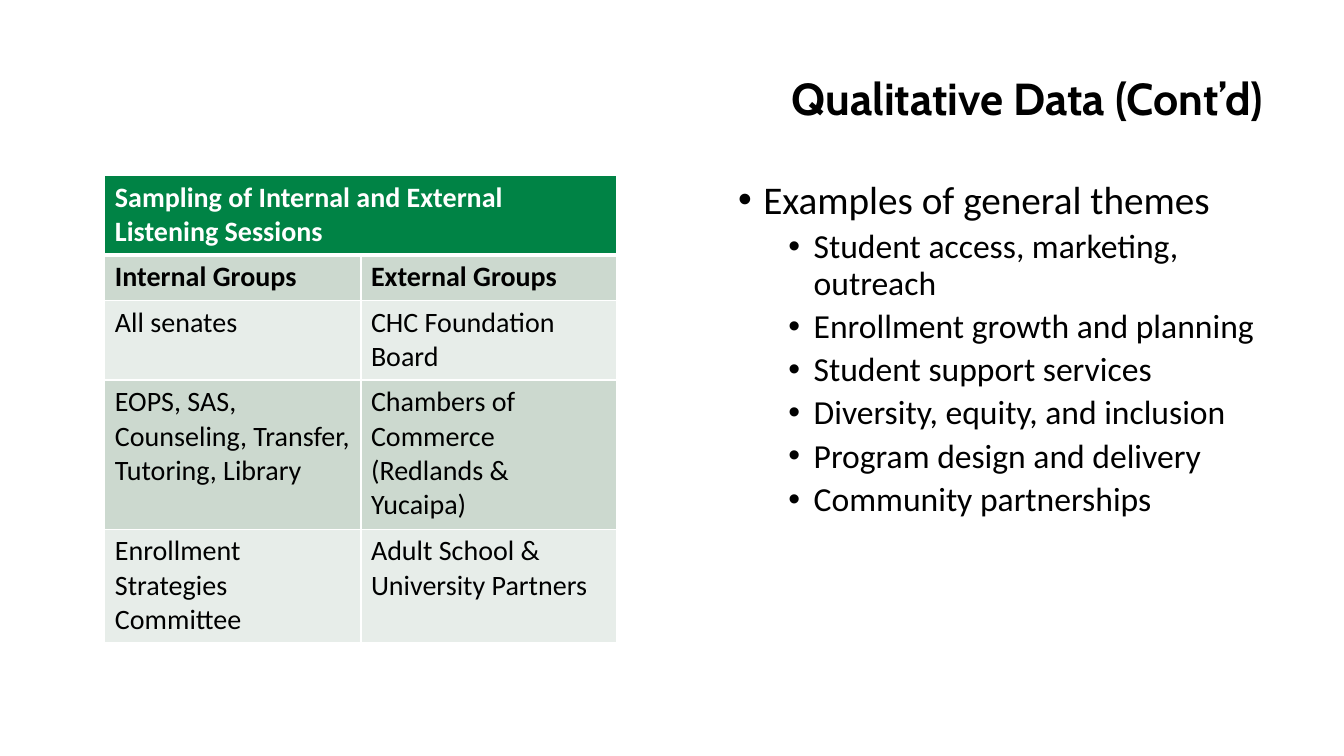
import pptx
import pptx.dml.color
import pptx.enum.text
import pptx.oxml
import pptx.oxml.ns
import pptx.util
from pptx.util import Inches, Pt

RGBColor = pptx.dml.color.RGBColor
BLACK = RGBColor(0x00, 0x00, 0x00)
WHITE = RGBColor(0xFF, 0xFF, 0xFF)
GREEN = RGBColor(0x00, 0x83, 0x45)
BANDS = [RGBColor(0xCC, 0xD9, 0xCF), RGBColor(0xE7, 0xED, 0xE9)]

# Content
TITLE = "Qualitative Data (Cont’d)"
THEMES_HEADING = "Examples of general themes"
THEMES = [
    "Student access, marketing, outreach",
    "Enrollment growth and planning",
    "Student support services",
    "Diversity, equity, and inclusion",
    "Program design and delivery",
    "Community partnerships",
]
SESSIONS = [
    ("Sampling of Internal and External Listening Sessions", ""),
    ("Internal Groups", "External Groups"),
    ("All senates", "CHC Foundation Board"),
    ("EOPS, SAS, Counseling, Transfer, Tutoring, Library",
     "Chambers of Commerce (Redlands & Yucaipa)"),
    ("Enrollment Strategies Committee", "Adult School & University Partners"),
]
ROW_HEIGHTS = [0.79, 0.45, 0.79, 1.48, 1.13]
COLUMN_WIDTH = 2.54
CONTENT_TOP = 1.74


def place(shape, left, top, width, height):
    shape.left, shape.top = Inches(left), Inches(top)
    shape.width, shape.height = Inches(width), Inches(height)


def set_font(paragraph, name, size, color, bold=False):
    font = paragraph.font
    font.name, font.size, font.bold = name, Pt(size), bold
    font.color.rgb = color


def add_bullet(paragraph, indent):
    properties = paragraph._p.get_or_add_pPr()
    properties.set("marL", str(Inches(indent)))
    properties.set("indent", str(Inches(-0.25)))
    for xml in ('<a:buFont {} typeface="Arial"/>', '<a:buChar {} char="•"/>'):
        properties.append(pptx.oxml.parse_xml(xml.format(pptx.oxml.ns.nsdecls("a"))))


def set_borders(cell, bottom_width):
    properties = cell._tc.get_or_add_tcPr()
    widths = {"lnL": 1, "lnR": 1, "lnT": 1, "lnB": bottom_width}
    for position, (side, width) in enumerate(widths.items()):
        properties.insert(position, pptx.oxml.parse_xml(
            f'<a:{side} {pptx.oxml.ns.nsdecls("a")} w="{Pt(width)}">'
            f'<a:solidFill><a:srgbClr val="{WHITE}"/></a:solidFill></a:{side}>'))


presentation = pptx.Presentation()
presentation.slide_width, presentation.slide_height = Inches(13.33), Inches(7.5)
slide = presentation.slides.add_slide(presentation.slide_layouts[1])

# Title
title = slide.shapes.title
place(title, 7.75, 0.75, 6.41, 0.5)
title.text_frame.text = TITLE
title.text_frame.auto_size = pptx.enum.text.MSO_AUTO_SIZE.NONE
title.text_frame.vertical_anchor = pptx.enum.text.MSO_ANCHOR.MIDDLE
heading = title.text_frame.paragraphs[0]
heading.alignment = pptx.enum.text.PP_ALIGN.LEFT
heading.line_spacing = 0.9
set_font(heading, "Cabin", 32, BLACK, True)

# List of themes
body = slide.placeholders[1]
place(body, 7.22, CONTENT_TOP, 5.52, 4.76)
body.text_frame.text = "\n".join([THEMES_HEADING] + THEMES)
body.text_frame.auto_size = pptx.enum.text.MSO_AUTO_SIZE.NONE
for index, paragraph in enumerate(body.text_frame.paragraphs):
    level = min(index, 1)
    paragraph.level = level
    paragraph.line_spacing = 0.9
    paragraph.space_before = Pt(5 * level)
    add_bullet(paragraph, 0.25 + 0.5 * level)
    set_font(paragraph, "Calibri", 28 - 4 * level, BLACK)

# Table of listening sessions
table = slide.shapes.add_table(
    len(SESSIONS), 2, Inches(1.04), Inches(CONTENT_TOP),
    Inches(2 * COLUMN_WIDTH), Inches(sum(ROW_HEIGHTS))).table
for column in table.columns:
    column.width = Inches(COLUMN_WIDTH)
for row_index, (texts, height) in enumerate(zip(SESSIONS, ROW_HEIGHTS)):
    is_header = row_index == 0
    table.rows[row_index].height = Inches(height)
    for cell, text in zip(table.rows[row_index].cells, texts):
        cell.text = text
        cell.fill.solid()
        cell.fill.fore_color.rgb = GREEN if is_header else BANDS[(row_index - 1) % 2]
        set_borders(cell, 3 if is_header else 1)
        set_font(cell.text_frame.paragraphs[0], "Calibri", 20,
                 WHITE if is_header else BLACK, row_index < 2)
table.cell(0, 0).merge(table.cell(0, 1))

presentation.save("out.pptx")
